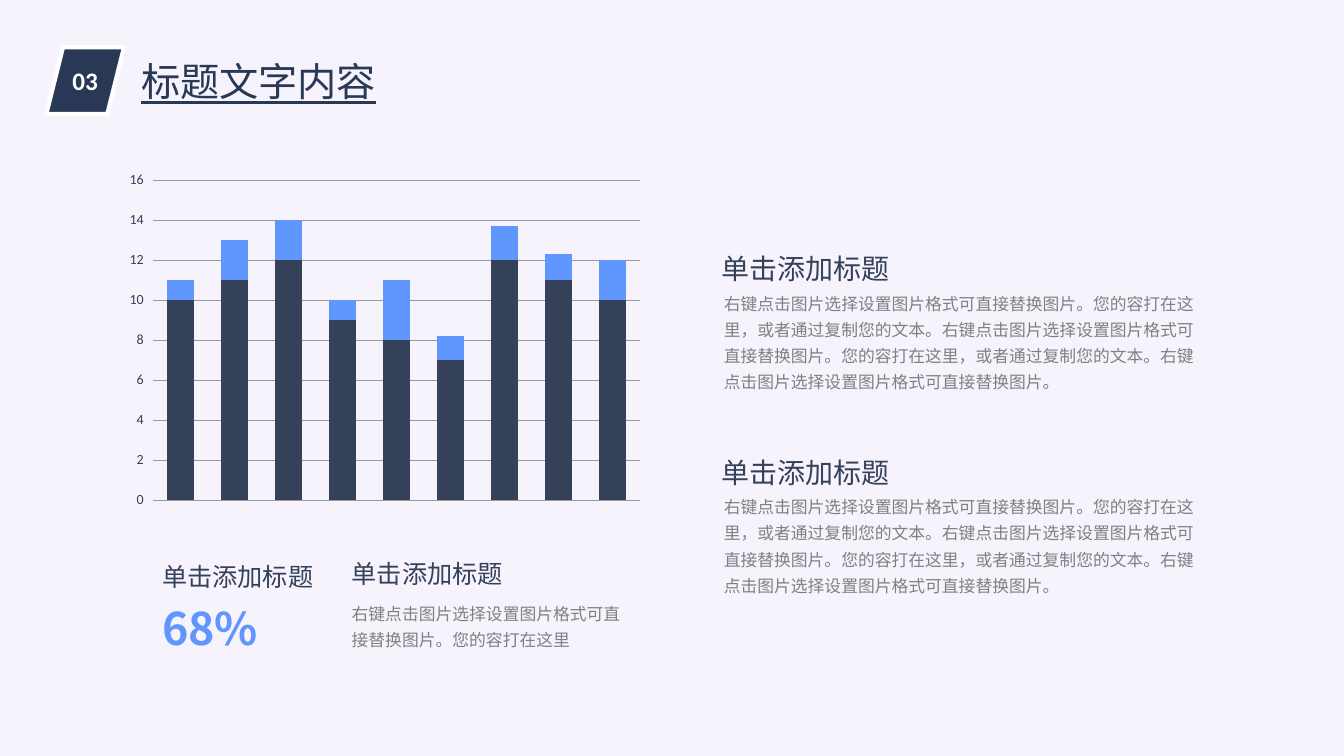
from lxml import etree
from pptx import Presentation
from pptx.chart import data as chart_data
from pptx.dml.color import RGBColor
from pptx.enum import chart as charts, shapes, text
from pptx.oxml import ns
from pptx.util import Inches, Pt

COLORS = {
    "background": "F7F3FD",
    "navy": "283855",
    "slate": "344159",
    "blue": "6196FF",
    "grey": "808080",
    "grid": "999999",
    "white": "FFFFFF",
}
LATIN, CJK = "Calibri", "Noto Sans CJK SC"
HEADING = "单击添加标题"
SENTENCE = "右键点击图片选择设置图片格式可直接替换图片。"
SHORT_TEXT = SENTENCE + "您的容打在这里"
LONG_TEXT = (SHORT_TEXT + "，或者通过复制您的文本。") * 2 + SENTENCE
SERIES = [
    ("Series 1", (10, 11, 12, 9, 8, 7, 12, 11, 10), "slate"),
    ("Series 2", (1, 2, 2, 1, 3, 1.2, 1.7, 1.3, 2), "blue"),
]


def color(name):
    """Return the named colour."""
    return RGBColor.from_string(COLORS[name])


def fill_solid(fill, name):
    """Fill with one named colour."""
    fill.solid()
    fill.fore_color.rgb = color(name)


def write(shape, words, size, color_name, font_name=CJK, bold=False,
          underline=None, spacing=1.0, before=0, align=text.PP_ALIGN.LEFT):
    """Put one formatted paragraph into a shape."""
    frame = shape.text_frame
    frame.text = words
    frame.word_wrap = True
    frame.auto_size = text.MSO_AUTO_SIZE.NONE
    paragraph = frame.paragraphs[0]
    paragraph.alignment = align
    paragraph.line_spacing = spacing
    paragraph.space_before = Pt(before)
    font = paragraph.runs[0].font
    font.size, font.bold, font.underline = Pt(size), bold, underline
    font.color.rgb = color(color_name)
    font.name = font_name
    properties = paragraph.runs[0]._r.get_or_add_rPr()
    etree.SubElement(properties, ns.qn("a:ea"), typeface=font_name)


def add_text(slide, left, top, width, height, words, size, color_name, **style):
    """Add a text box with one paragraph."""
    box = slide.shapes.add_textbox(
        Inches(left), Inches(top), Inches(width), Inches(height))
    write(box, words, size, color_name, **style)


def add_header(slide, left, top):
    """Place the numbered badge and the slide title."""
    badge = slide.shapes.add_shape(
        shapes.MSO_SHAPE.PARALLELOGRAM,
        Inches(left), Inches(top), Inches(0.77), Inches(0.66))
    badge.shadow.inherit = False
    fill_solid(badge.fill, "navy")
    badge.line.color.rgb = color("white")
    badge.line.width = Pt(3)
    write(badge, "03", 18, "white", font_name=LATIN, bold=True,
          align=text.PP_ALIGN.CENTER)
    badge.text_frame.vertical_anchor = text.MSO_ANCHOR.MIDDLE
    badge.text_frame.word_wrap = False

    title = slide.shapes.title
    title.left, title.top = Inches(left + 0.77), Inches(top + 0.05)
    title.width, title.height = Inches(2.67), Inches(0.57)
    write(title, "标题文字内容", 28, "navy", underline=True,
          align=text.PP_ALIGN.CENTER)
    title.text_frame.vertical_anchor = text.MSO_ANCHOR.TOP


def add_column_chart(slide, left, top, width, height):
    """Place the stacked column chart."""
    figures = chart_data.CategoryChartData()
    figures.categories = [str(number) for number in range(1, 10)]
    for name, values, _ in SERIES:
        figures.add_series(name, values)
    chart = slide.shapes.add_chart(
        charts.XL_CHART_TYPE.COLUMN_STACKED,
        Inches(left), Inches(top), Inches(width), Inches(height), figures).chart
    chart.has_legend = False
    chart.has_title = False
    chart.font.size = Pt(10)
    chart.font.name = LATIN
    chart.font.color.rgb = color("slate")

    plot = chart.plots[0]
    plot.gap_width, plot.overlap = 100, 100
    plot.vary_by_categories = False
    for series, (_, _, color_name) in zip(plot.series, SERIES):
        fill_solid(series.format.fill, color_name)

    chart.category_axis.visible = False
    axis = chart.value_axis
    axis.minimum_scale, axis.maximum_scale, axis.major_unit = 0, 16, 2
    axis.major_tick_mark = charts.XL_TICK_MARK.OUTSIDE
    axis.format.line.fill.background()
    axis.has_major_gridlines = True
    axis.major_gridlines.format.line.color.rgb = color("grid")
    axis.major_gridlines.format.line.width = Pt(0.75)


def add_summary(slide, left, top):
    """Place the percentage and its explanation below the chart."""
    add_text(slide, left, top + 0.03, 1.8, 0.46, HEADING, 18, "slate", spacing=1.3)
    add_text(slide, left, top + 0.51, 1.43, 0.64, "68%", 32, "blue", bold=True)
    note_left = left + 1.88
    add_text(slide, note_left, top, 2.11, 0.53, HEADING, 18, "slate",
             spacing=1.3, before=10)
    add_text(slide, note_left, top + 0.48, 2.96, 0.88, SHORT_TEXT, 12, "grey",
             spacing=1.3, before=10)


def add_text_block(slide, left, top):
    """Place a heading with its paragraph."""
    add_text(slide, left - 0.02, top + 0.05, 3.32, 0.6, HEADING, 20, "slate",
             spacing=1.3)
    add_text(slide, left, top + 0.5, 5.02, 1.15, LONG_TEXT, 12, "grey", spacing=1.3)


def main():
    """Build and save the slide."""
    presentation = Presentation()
    presentation.slide_width = Inches(13.33)
    presentation.slide_height = Inches(7.5)
    slide = presentation.slides.add_slide(presentation.slide_layouts[5])
    fill_solid(slide.background.fill, "background")
    add_header(slide, 0.46, 0.47)
    add_column_chart(slide, 1.18, 1.64, 5.27, 3.47)
    add_summary(slide, 1.51, 5.4)
    for top in (2.3, 4.32):
        add_text_block(slide, 7.08, top)
    presentation.save("out.pptx")


if __name__ == "__main__":
    main()
